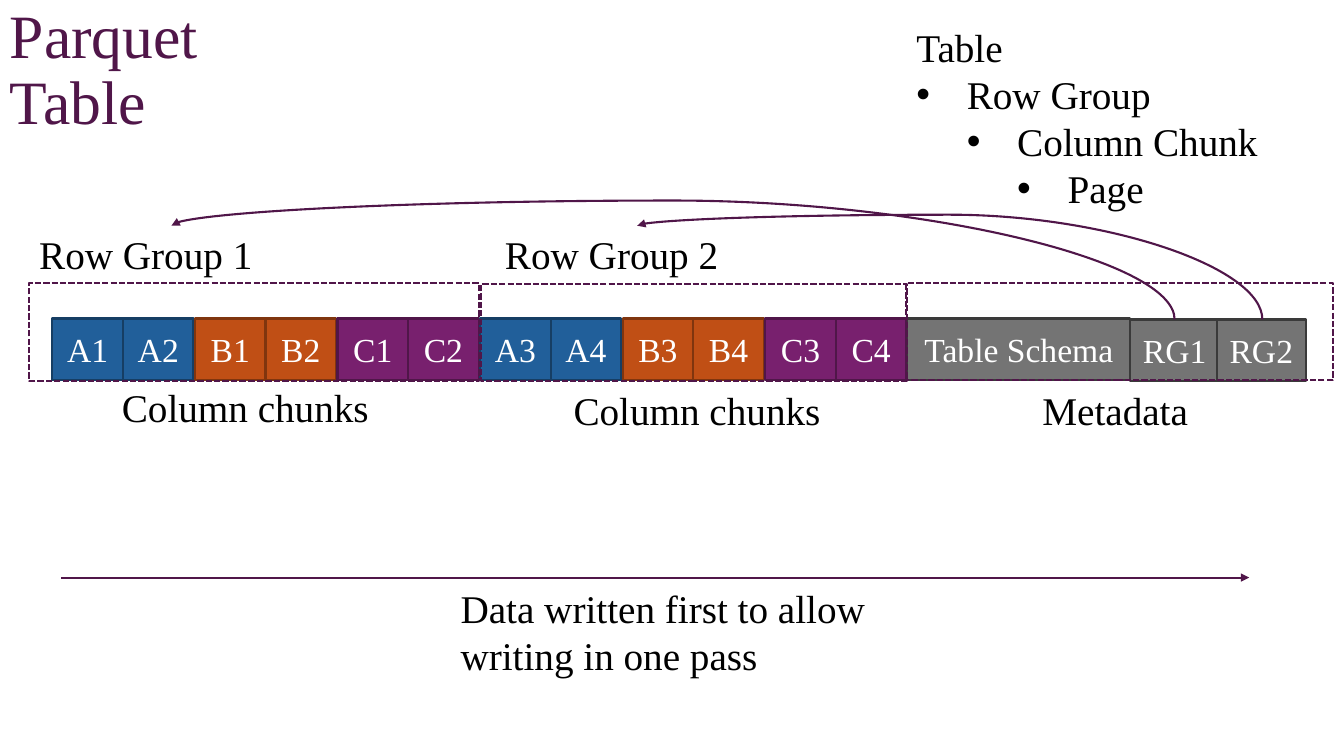
from lxml.etree import SubElement
from pptx import Presentation
from pptx.dml.color import RGBColor
from pptx.enum.dml import MSO_LINE
from pptx.enum.shapes import MSO_CONNECTOR, MSO_SHAPE
from pptx.enum.text import MSO_ANCHOR, MSO_AUTO_SIZE, PP_ALIGN
from pptx.oxml.ns import qn
from pptx.util import Inches, Pt

FONT = "Times New Roman"
PLUM, BLACK, WHITE = "501649", "000000", "FFFFFF"
GRAY, DARK_GRAY = "747474", "3A3A3A"

TITLE = "Parquet Table"
HIERARCHY = ["Table", "Row Group", "Column Chunk", "Page"]
COLUMNS = [("A", "215F9A", "163E64"), ("B", "C04F15", "80350E"), ("C", "78206E", "501649")]
ROW_GROUPS = 2
PAGES = 2
METADATA = [("Table Schema", 9, 3.16, 2.21), ("RG1", 11.21, 3.17, 0.88), ("RG2", 12.07, 3.17, 0.88)]
SECTIONS = [(0.29, 2.81, 4.46, 0.97), (4.77, 2.82, 4.23, 0.96), (8.99, 2.81, 4.23, 0.96)]
LABELS = [
    ("Row Group 1", 0.29, 2.24, 2.82, 0.57),
    ("Row Group 2", 4.91, 2.24, 2.82, 0.57),
    ("Column chunks", 1.11, 3.75, 2.82, 0.57),
    ("Column chunks", 5.59, 3.78, 2.82, 0.57),
    ("Metadata", 10.24, 3.78, 1.71, 0.57),
    ("Data written first to allow writing in one pass", 4.47, 5.75, 4.4, 1.04),
]
# start, end, height of the curve's crest
POINTERS = [((11.65, 3.17), (1.7, 2.24), 1.99), ((12.52, 3.17), (6.32, 2.24), 2.13)]
WRITE_ORDER = (0.61, 5.73, 12.39, 5.73)

CELL_LEFT, CELL_TOP, CELL_WIDTH, CELL_HEIGHT = 0.52, 3.16, 0.7, 0.61
CHUNK_STEP = 1.414


def color(hex_value):
    return RGBColor.from_string(hex_value)


def add_span(para, text, size, ink):
    span = para.add_run()
    span.text = text
    span.font.name = FONT
    span.font.size = Pt(size)
    span.font.color.rgb = color(ink)


def add_text(page, lines, left, top, width, height, size=28, ink=BLACK):
    """Add a wrapping text box; each line after the first is one bullet level deeper."""
    box = page.shapes.add_textbox(*map(Inches, (left, top, width, height)))
    frame = box.text_frame
    frame.word_wrap = True
    for depth, line in enumerate(lines):
        para = frame.paragraphs[0] if depth == 0 else frame.add_paragraph()
        if depth:
            para.level = depth - 1
            properties = para._p.get_or_add_pPr()
            properties.set("marL", str(Inches(0.5 * depth)))
            properties.set("indent", str(Inches(-0.5)))
            SubElement(properties, qn("a:buFont")).set("typeface", "Arial")
            SubElement(properties, qn("a:buChar")).set("char", "•")
        add_span(para, line, size, ink)
    return frame


def add_rectangle(page, left, top, width, height, fill, border):
    box = page.shapes.add_shape(MSO_SHAPE.RECTANGLE, *map(Inches, (left, top, width, height)))
    box.shadow.inherit = False
    if fill:
        box.fill.solid()
        box.fill.fore_color.rgb = color(fill)
    else:
        box.fill.background()
    box.line.color.rgb = color(border)
    box.line.width = Pt(1.5)
    return box


def add_cell(page, text, left, top, width, fill, border):
    box = add_rectangle(page, left, top, width, CELL_HEIGHT, fill, border)
    frame = box.text_frame
    frame.word_wrap = True
    frame.vertical_anchor = MSO_ANCHOR.MIDDLE
    frame.margin_left = frame.margin_right = Inches(0.05)
    para = frame.paragraphs[0]
    para.alignment = PP_ALIGN.CENTER
    add_span(para, text, 24, WHITE)


def add_arrow(page, kind, *ends):
    arrow = page.shapes.add_connector(kind, *map(Inches, ends))
    arrow.line.color.rgb = color(PLUM)
    arrow.line.width = Pt(1.5)
    SubElement(arrow.line._get_or_add_ln(), qn("a:tailEnd")).set("type", "triangle")
    SubElement(arrow._element.spPr, qn("a:effectLst"))
    return arrow


def add_pointer(page, start, end, crest):
    """Add a curve that leaves start upwards, crests, and drops onto end to its left."""
    run, rise = start[0] - end[0], start[1] - end[1]
    middle_x, middle_y = (start[0] + end[0]) / 2, (start[1] + end[1]) / 2
    # The frame is laid out upright, then turned by 270 degrees about its centre.
    arrow = add_arrow(page, MSO_CONNECTOR.CURVE, middle_x - rise / 2, middle_y + run / 2,
                      middle_x + rise / 2, middle_y - run / 2)
    properties = arrow._element.spPr
    properties.find(qn("a:xfrm")).set("rot", str(270 * 60000))
    guides = properties.find(qn("a:prstGeom")).get_or_add_avLst()
    guide = SubElement(guides, qn("a:gd"))
    guide.set("name", "adj1")
    guide.set("fmla", f"val {round((start[1] - crest) / rise * 100000)}")


def main():
    deck = Presentation()
    deck.slide_width, deck.slide_height = Inches(13.33), Inches(7.5)
    page = deck.slides.add_slide(deck.slide_layouts[6])

    title = add_text(page, [TITLE], 0, 0, 3, 1.4, 44, PLUM)
    title.paragraphs[0].line_spacing = 0.9

    for group in range(ROW_GROUPS):
        for column, (letter, fill, border) in enumerate(COLUMNS):
            chunk_left = CELL_LEFT + CHUNK_STEP * (group * len(COLUMNS) + column)
            for number in range(PAGES):
                add_cell(page, f"{letter}{group * PAGES + number + 1}",
                         chunk_left + number * CELL_WIDTH, CELL_TOP, CELL_WIDTH, fill, border)
    for text, left, top, width in METADATA:
        add_cell(page, text, left, top, width, GRAY, DARK_GRAY)

    for place in SECTIONS:
        section = add_rectangle(page, *place, None, PLUM)
        section.line.dash_style = MSO_LINE.SQUARE_DOT

    for text, *place in LABELS:
        add_text(page, [text], *place).auto_size = MSO_AUTO_SIZE.SHAPE_TO_FIT_TEXT
    hierarchy = add_text(page, HIERARCHY, 8.99, 0.18, 4.22, 1.99)
    hierarchy.auto_size = MSO_AUTO_SIZE.SHAPE_TO_FIT_TEXT

    add_arrow(page, MSO_CONNECTOR.STRAIGHT, *WRITE_ORDER)
    for start, end, crest in POINTERS:
        add_pointer(page, start, end, crest)

    deck.save("out.pptx")


if __name__ == "__main__":
    main()
